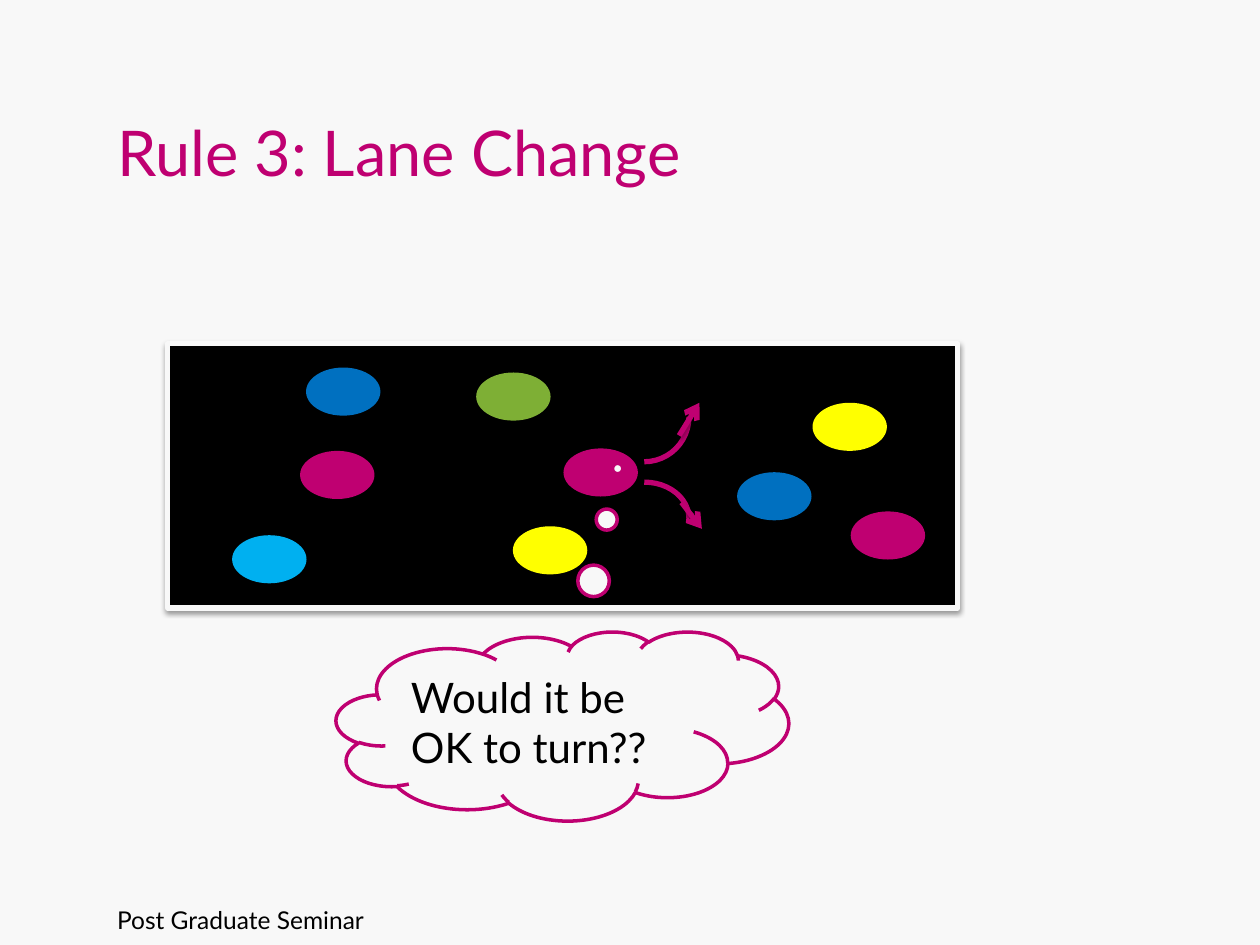
from lxml import etree
from pptx import Presentation
from pptx.dml.color import RGBColor
from pptx.enum.shapes import MSO_CONNECTOR, MSO_SHAPE
from pptx.enum.text import MSO_ANCHOR, PP_ALIGN
from pptx.oxml.ns import qn
from pptx.util import Cm, Pt

RECTANGLE, OVAL = MSO_SHAPE.RECTANGLE, MSO_SHAPE.OVAL
ARC, CLOUD = MSO_SHAPE.ARC, MSO_SHAPE.CLOUD_CALLOUT
STRAIGHT = MSO_CONNECTOR.STRAIGHT
TOP, MIDDLE, BOTTOM = MSO_ANCHOR.TOP, MSO_ANCHOR.MIDDLE, MSO_ANCHOR.BOTTOM
LEFT = PP_ALIGN.LEFT

FONT = "Lato"
BLACK, PAPER, MAGENTA = "000000", "F8F8F8", "BF0071"
BLUE, SKY, YELLOW, GREEN = "0070C0", "00B0F0", "FFFF00", "7EAF35"

# All positions are in centimetres
CAR_SIZE = (1.5, 0.97)
CARS = [  # left and top within the road, colour
    (7.98, 2.11, MAGENTA), (13.77, 3.38, MAGENTA), (2.79, 0.48, BLUE),
    (1.3, 3.86, SKY), (6.96, 3.68, YELLOW), (6.22, 0.58, GREEN),
    (13.0, 1.19, YELLOW), (11.48, 2.59, BLUE), (2.67, 2.16, MAGENTA),
]
TURN_ARCS = [  # left, top, width, height, flipped
    (8.71, 2.79, 1.8, 1.45, False), (8.71, 0.58, 1.8, 1.8, True),
]
TURN_HEADS = [(10.31, 1.85, 10.72, 1.19), (10.36, 3.2, 10.77, 3.73)]


def rgb(value):
    return RGBColor.from_string(value)


def set_line(shape, color, width):
    shape.line.color.rgb = rgb(color)
    shape.line.width = Pt(width)


def add_shadow(shape, alpha, distance):
    """Drop a soft shadow straight down; call after fill and line are set."""
    effects = etree.SubElement(shape._element.spPr, qn("a:effectLst"))
    outer = etree.SubElement(
        effects, qn("a:outerShdw"), blurRad=str(Pt(3.1)),
        dist=str(Pt(distance)), dir="5400000", algn="ctr", rotWithShape="0")
    black = etree.SubElement(outer, qn("a:srgbClr"), val=BLACK)
    etree.SubElement(black, qn("a:alpha"), val=str(alpha * 1000))


def write(shape, text, size, color, anchor, wrap=True):
    frame = shape.text_frame
    frame.word_wrap = wrap
    frame.vertical_anchor = anchor
    paragraph = frame.paragraphs[0]
    paragraph.alignment = LEFT
    run = paragraph.add_run()
    run.text = text
    run.font.name = FONT
    run.font.size = Pt(size)
    run.font.color.rgb = rgb(color)


def add_label(slide, box, text, size, color, anchor, wrap=True):
    label = slide.shapes.add_textbox(*map(Cm, box))
    write(label, text, size, color, anchor, wrap)


def add_turn_arrows(slide, left, top):
    for x, y, width, height, flipped in TURN_ARCS:
        arc = slide.shapes.add_shape(
            ARC, Cm(left + x), Cm(top + y), Cm(width), Cm(height))
        arc.fill.background()
        set_line(arc, MAGENTA, 3)
        add_shadow(arc, 35, 1.8)
        if flipped:
            arc._element.spPr.xfrm.set("flipV", "1")

    for x1, y1, x2, y2 in TURN_HEADS:
        head = slide.shapes.add_connector(
            STRAIGHT, Cm(left + x1), Cm(top + y1), Cm(left + x2), Cm(top + y2))
        set_line(head, MAGENTA, 3)
        etree.SubElement(head.line._get_or_add_ln(), qn("a:tailEnd"), type="arrow")
        add_shadow(head, 35, 1.8)


def add_road(slide, box):
    left, top = box[:2]
    road = slide.shapes.add_shape(RECTANGLE, *map(Cm, box))
    road.fill.solid()
    road.fill.fore_color.rgb = rgb(BLACK)
    set_line(road, PAPER, 3)
    add_shadow(road, 38, 1.6)

    # Cars in traffic
    for x, y, color in CARS:
        car = slide.shapes.add_shape(
            OVAL, Cm(left + x), Cm(top + y), *map(Cm, CAR_SIZE))
        car.shadow.inherit = False
        car.fill.solid()
        car.fill.fore_color.rgb = rgb(color)
        car.line.fill.background()

    add_turn_arrows(slide, left, top)


def add_thought(slide, box, text):
    """Cloud whose bubbles lead up to the turning car."""
    cloud = slide.shapes.add_shape(CLOUD, *map(Cm, box))
    cloud.shadow.inherit = False
    cloud.adjustments[0] = 0.122
    cloud.adjustments[1] = -1.362
    cloud.fill.solid()
    cloud.fill.fore_color.rgb = rgb(PAPER)
    set_line(cloud, MAGENTA, 2)
    write(cloud, text, 24, BLACK, MIDDLE)


def main():
    deck = Presentation()
    deck.slide_width, deck.slide_height = Cm(25.4), Cm(19.05)
    slide = deck.slides.add_slide(deck.slide_layouts[6])
    slide.background.fill.solid()
    slide.background.fill.fore_color.rgb = rgb(PAPER)

    # Footer and title
    add_label(slide, (2.11, 18.11, 17.6, 1.32), "Post Graduate Seminar",
              14, BLACK, TOP)
    add_label(slide, (2.11, 0.76, 17.2, 3.18), "Rule 3: Lane Change",
              36, MAGENTA, BOTTOM, wrap=False)

    # Traffic scene and the driver's question
    add_road(slide, (3.38, 6.93, 15.93, 5.33))
    add_thought(slide, (6.78, 12.73, 9.12, 3.81), "Would it be OK to turn??")
    deck.save("out.pptx")


if __name__ == "__main__":
    main()
